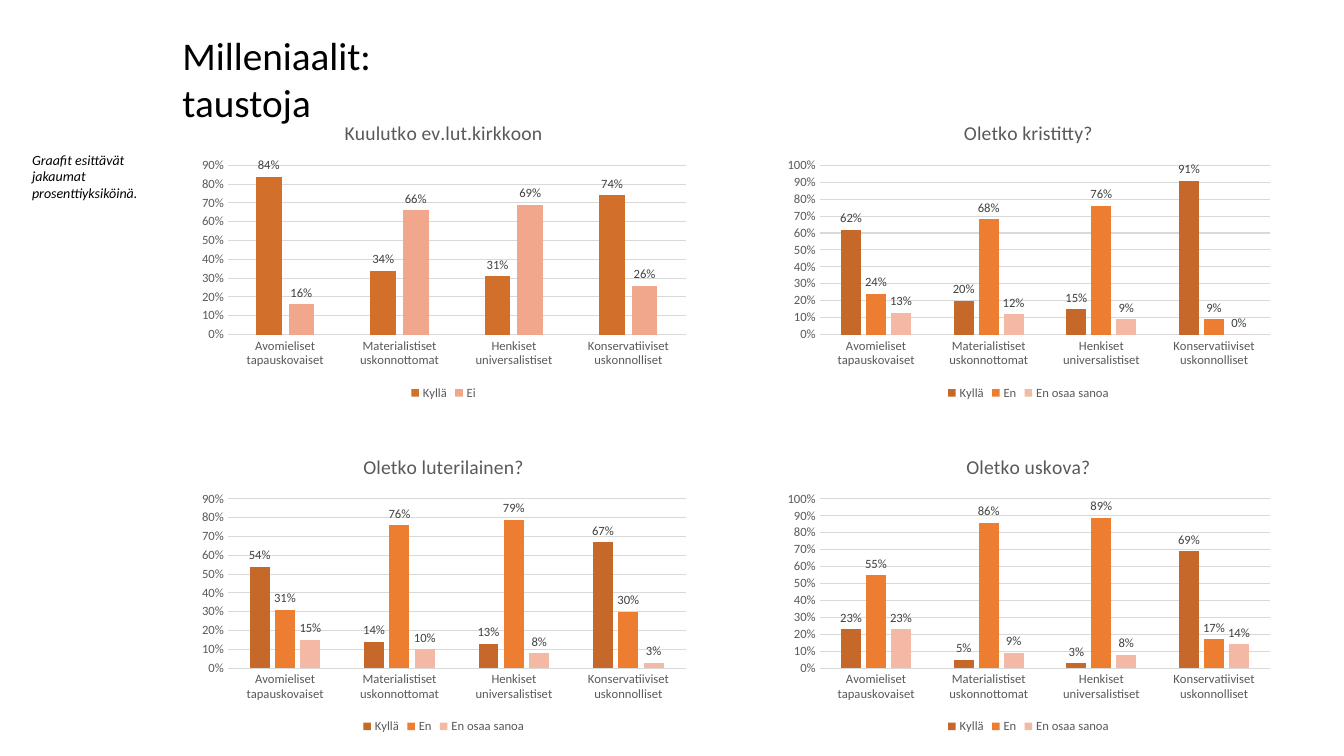
from dataclasses import dataclass

import lxml.etree
import pptx
import pptx.chart.chart
import pptx.chart.data
import pptx.dml.color
import pptx.enum.chart
import pptx.enum.text
import pptx.oxml.ns
import pptx.slide
import pptx.text.text
import pptx.util

PX = 9144  # 100 px to the inch
WIDE, HIGH = 500, 297
RIGHT, TOP, DEEP = 490, 60, 168  # plot area within a chart


@dataclass(frozen=True)
class Theme:
    face: str = "Calibri"
    black: str = "000000"
    gray: str = "595959"
    dark: str = "404040"
    grid: str = "D9D9D9"
    pair: tuple[str, ...] = ("D26F2B", "F1A78B")
    trio: tuple[str, ...] = ("C56829", "ED7D31", "F3B9A4")
    title: int = 28
    head: int = 14
    note: int = 10
    small: int = 9


@dataclass(frozen=True)
class Graph:
    title: str
    left: int
    top: int
    peak: float
    inset: int
    names: tuple[str, ...]
    rows: tuple[tuple[float, ...], ...]
    tints: tuple[str, ...]


THEME = Theme()
GROUPS = ("Avomieliset tapauskovaiset", "Materialistiset uskonnottomat",
          "Henkiset universalistiset", "Konservatiiviset uskonnolliset")
TWO = ("Kyllä", "Ei")
THREE = ("Kyllä", "En", "En osaa sanoa")
COLS, ROWS = (190, 770), (104, 435)
GRAPHS = (
    Graph("Oletko uskova?", COLS[1], ROWS[1], 1.0, 43, THREE,
          ((0.23, 0.05, 0.03, 0.69), (0.55, 0.86, 0.89, 0.17), (0.23, 0.09, 0.08, 0.14)),
          THEME.trio),
    Graph("Oletko luterilainen?", COLS[0], ROWS[1], 0.9, 36, THREE,
          ((0.54, 0.14, 0.13, 0.67), (0.31, 0.76, 0.79, 0.3), (0.15, 0.1, 0.08, 0.03)),
          THEME.trio),
    Graph("Oletko kristitty?", COLS[1], ROWS[0], 1.0, 43, THREE,
          ((0.62, 0.2, 0.15, 0.91), (0.24, 0.68, 0.76, 0.09), (0.13, 0.12, 0.09, 0)),
          THEME.trio),
    Graph("Kuulutko ev.lut.kirkkoon", COLS[0], ROWS[0], 0.9, 36, TWO,
          ((0.84, 0.34, 0.31, 0.74), (0.16, 0.66, 0.69, 0.26)), THEME.pair),
)


def px(*sizes: int) -> list[pptx.util.Emu]:
    return [pptx.util.Emu(size * PX) for size in sizes]


def rgb(tint: str) -> pptx.dml.color.RGBColor:
    return pptx.dml.color.RGBColor.from_string(tint)


def style(font: pptx.text.text.Font, size: int, tint: str, italic: bool = False) -> None:
    font.name, font.size = THEME.face, pptx.util.Pt(size)
    font.bold, font.italic = False, italic
    font.color.rgb = rgb(tint)


def write(frame: pptx.text.text.TextFrame, text: str, *, size: int,
          tint: str = THEME.black, italic: bool = False) -> None:
    frame.text = text
    frame.word_wrap = True
    frame.auto_size = pptx.enum.text.MSO_AUTO_SIZE.NONE
    frame.vertical_anchor = pptx.enum.text.MSO_ANCHOR.TOP
    line = frame.paragraphs[0]
    line.alignment = pptx.enum.text.PP_ALIGN.LEFT
    line.line_spacing = 1.0
    style(line.runs[0].font, size, tint, italic)


def place(chart: pptx.chart.chart.Chart, inset: int) -> None:
    """Fix the inner plot area as fractions of the chart."""
    qn = pptx.oxml.ns.qn
    area = chart.plots[0]._element.getparent()
    for old in area.findall(qn("c:layout")):
        area.remove(old)
    layout = lxml.etree.Element(qn("c:layout"))
    area.insert(0, layout)
    manual = lxml.etree.SubElement(layout, qn("c:manualLayout"))
    parts = (("layoutTarget", "inner"), ("xMode", "edge"), ("yMode", "edge"),
             ("x", inset / WIDE), ("y", TOP / HIGH),
             ("w", (RIGHT - inset) / WIDE), ("h", DEEP / HIGH))
    for name, value in parts:
        lxml.etree.SubElement(manual, qn(f"c:{name}")).set("val", str(value))


def draw(slide: pptx.slide.Slide, graph: Graph) -> None:
    enum = pptx.enum.chart
    data = pptx.chart.data.CategoryChartData(number_format="0%")
    data.categories = GROUPS
    for name, row in zip(graph.names, graph.rows):
        data.add_series(name, row)
    chart = slide.shapes.add_chart(
        enum.XL_CHART_TYPE.COLUMN_CLUSTERED,
        *px(graph.left, graph.top, WIDE, HIGH), data).chart
    style(chart.font, THEME.note, THEME.black)

    chart.has_title = True
    chart.chart_title.include_in_layout = False
    frame = chart.chart_title.text_frame
    frame.text = graph.title
    style(frame.paragraphs[0].runs[0].font, THEME.head, THEME.gray)

    chart.has_legend = True
    chart.legend.position = enum.XL_LEGEND_POSITION.BOTTOM
    chart.legend.include_in_layout = False
    style(chart.legend.font, THEME.small, THEME.gray)

    base, scale = chart.category_axis, chart.value_axis
    for axis in (base, scale):
        axis.major_tick_mark = axis.minor_tick_mark = enum.XL_TICK_MARK.NONE
        style(axis.tick_labels.font, THEME.small, THEME.gray)
    scale.minimum_scale, scale.maximum_scale, scale.major_unit = 0, graph.peak, 0.1
    scale.tick_labels.number_format = "0%"
    scale.tick_labels.number_format_is_linked = False
    scale.format.line.fill.background()
    for line in (base.format.line, scale.major_gridlines.format.line):
        line.color.rgb = rgb(THEME.grid)
        line.width = pptx.util.Pt(0.75)

    plot = chart.plots[0]
    plot.gap_width, plot.overlap, plot.vary_by_categories = 219, -27, False
    for bars, tint in zip(plot.series, graph.tints):
        bars.format.fill.solid()
        bars.format.fill.fore_color.rgb = rgb(tint)
        bars.invert_if_negative = False
        labels = bars.data_labels
        labels.show_value = True
        labels.position = enum.XL_LABEL_POSITION.OUTSIDE_END
        labels.number_format, labels.number_format_is_linked = "0%", False
        style(labels.font, THEME.small, THEME.dark)
    place(chart, graph.inset)


def main() -> None:
    deck = pptx.Presentation()
    deck.slide_width, deck.slide_height = px(1333, 750)
    slide = deck.slides.add_slide(deck.slide_layouts.get_by_name("Title Only"))
    for graph in GRAPHS:
        draw(slide, graph)
    title = slide.shapes.title
    title.left, title.top, title.width, title.height = px(171, 26, 320, 103)
    write(title.text_frame, "Milleniaalit: taustoja", size=THEME.title)
    note = slide.shapes.add_textbox(*px(22, 145, 133, 61))
    write(note.text_frame, "Graafit esittävät jakaumat prosenttiyksiköinä.",
          size=THEME.note, italic=True)
    deck.save("out.pptx")


if __name__ == "__main__":
    main()
